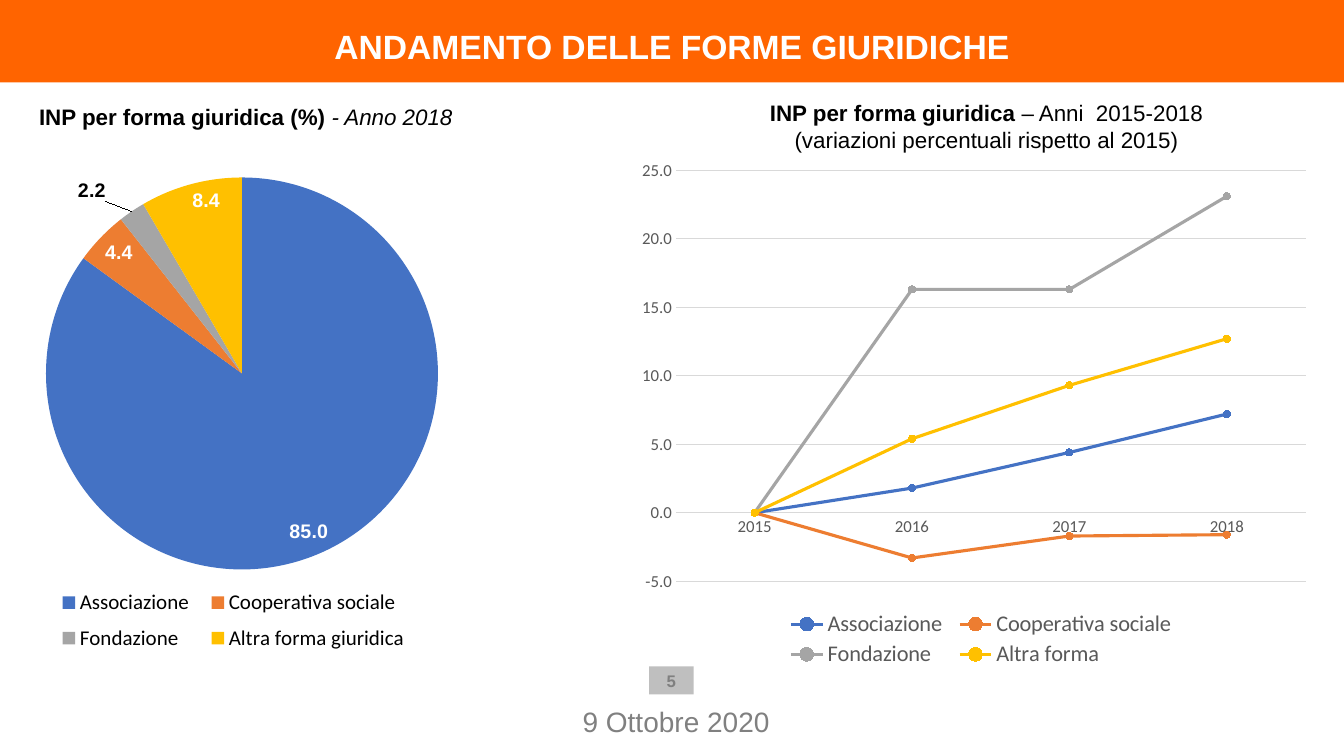
from lxml.etree import SubElement
from pptx import Presentation
from pptx.chart.data import CategoryChartData
from pptx.dml.color import RGBColor
from pptx.enum.chart import XL_CHART_TYPE as CT, XL_LABEL_POSITION as LP
from pptx.enum.chart import XL_LEGEND_POSITION, XL_MARKER_STYLE, XL_TICK_MARK
from pptx.enum.shapes import MSO_SHAPE
from pptx.enum.text import MSO_ANCHOR, PP_ALIGN
from pptx.oxml import parse_xml
from pptx.oxml.ns import nsdecls, qn
from pptx.util import Cm, Pt

COLORS = {
    "orange": "FF6400", "white": "FFFFFF", "black": "000000",
    "badge": "BFBFBF", "muted": "808080", "axis": "595959", "grid": "D9D9D9",
}
SERIES_COLORS = ["4472C4", "ED7D31", "A5A5A5", "FFC000"]
SHARES = {
    "Associazione": 85.0, "Cooperativa sociale": 4.4,
    "Fondazione": 2.2, "Altra forma giuridica": 8.4,
}
YEARS = ["2015", "2016", "2017", "2018"]
CHANGES = {
    "Associazione": [0, 1.8, 4.4, 7.2],
    "Cooperativa sociale": [0, -3.3, -1.7, -1.6],
    "Fondazione": [0, 16.3, 16.3, 23.1],
    "Altra forma": [0, 5.4, 9.3, 12.7],
}


def rgb(name):
    return RGBColor.from_string(COLORS.get(name, name))


def style_font(font, size, color, name="Arial", bold=False, italic=False):
    font.size, font.name, font.bold, font.italic = Pt(size), name, bold, italic
    font.color.rgb = rgb(color)


def paint(fmt, color):
    fmt.fill.solid()
    fmt.fill.fore_color.rgb = rgb(color)


def write(sp, lines, size, color, anchor, insets=(0.25, 0.13, 0.25, 0.13), wrap=True):
    tf = sp.text_frame
    tf.word_wrap, tf.vertical_anchor = wrap, anchor
    tf.margin_left, tf.margin_top, tf.margin_right, tf.margin_bottom = map(Cm, insets)
    for i, runs in enumerate(lines):
        p = tf.add_paragraph() if i else tf.paragraphs[0]
        p.alignment = PP_ALIGN.CENTER
        for text, bold, italic in runs:
            r = p.add_run()
            r.text = text
            style_font(r.font, size, color, bold=bold, italic=italic)


def add_bar(s, box, fill, text, size, color, anchor, insets):
    sp = s.shapes.add_shape(MSO_SHAPE.RECTANGLE, *map(Cm, box))
    sp.shadow.inherit = False
    paint(sp, fill)
    sp.line.fill.background()
    write(sp, [[(text, True, False)]], size, color, anchor, insets)


def add_text(s, box, lines, size, color="black", anchor=MSO_ANCHOR.TOP, **options):
    sp = s.shapes.add_textbox(*map(Cm, box))
    write(sp, lines, size, color, anchor, **options)


def set_layout(parent, index, inner=False, fixed=True, **values):
    for old in parent.findall(qn("c:layout")):
        parent.remove(old)
    layout = parse_xml(f"<c:layout {nsdecls('c')}><c:manualLayout/></c:layout>")
    manual = layout[0]
    if inner:
        SubElement(manual, qn("c:layoutTarget")).set("val", "inner")
    if fixed:
        for mode in ("xMode", "yMode"):
            SubElement(manual, qn(f"c:{mode}")).set("val", "edge")
    for key, value in values.items():
        SubElement(manual, qn(f"c:{key}")).set("val", str(value))
    parent.insert(index, layout)


def add_chart(s, kind, box, cats, series, legend_size, legend_color, plot_box, legend_box):
    data = CategoryChartData(number_format="0.0")
    data.categories = cats
    for name, values in series.items():
        data.add_series(name, values)
    chart = s.shapes.add_chart(kind, *map(Cm, box), data).chart
    chart.has_title = False
    style_font(chart.font, 12, "black", "Calibri")
    chart.has_legend = True
    legend = chart.legend
    legend.position = XL_LEGEND_POSITION.BOTTOM
    legend.include_in_layout = False
    style_font(legend.font, legend_size, legend_color, "Calibri")
    plot_area = chart.plots[0]._element.getparent()
    set_layout(plot_area, 0, inner=True, **plot_box)
    set_layout(legend._element, 1, **legend_box)
    return chart


def add_pie(s):
    chart = add_chart(
        s, CT.PIE, (0.38, 3.96, 11.46, 12.83), list(SHARES),
        {"Series 1": list(SHARES.values())}, 15, "black",
        dict(x=0.068, y=0.04, w=0.862, h=0.77), dict(x=0.07, y=0.83, w=0.82, h=0.16))
    chart.plots[0].vary_by_categories = True
    ser = chart.plots[0].series[0]
    for i, color in enumerate(SERIES_COLORS):
        paint(ser.points[i].format, color)
    labels = ser.data_labels
    labels.show_value = True
    labels.number_format, labels.number_format_is_linked = "0.0", False
    labels.position = LP.INSIDE_END
    style_font(labels.font, 14, "white", bold=True)
    label = ser.points[2].data_label
    style_font(label.font, 14, "black", bold=True)
    label.position = LP.OUTSIDE_END
    set_layout(labels._element[0], 1, fixed=False, x=-0.05, y=-0.01)


def add_lines(s):
    chart = add_chart(
        s, CT.LINE_MARKERS, (15.85, 3.76, 17.4, 13.28), YEARS, CHANGES, 16, "axis",
        dict(x=0.068, y=0.04, w=0.912, h=0.78), dict(x=0.22, y=0.87, w=0.58, h=0.12))
    for ser, color in zip(chart.plots[0].series, SERIES_COLORS):
        ser.smooth = False
        ser.format.line.width = Pt(2.25)
        ser.format.line.color.rgb = rgb(color)
        ser.marker.style, ser.marker.size = XL_MARKER_STYLE.CIRCLE, 5
        paint(ser.marker.format, color)
        ser.marker.format.line.color.rgb = rgb(color)
    years, values = chart.category_axis, chart.value_axis
    for axis in (years, values):
        axis.major_tick_mark = axis.minor_tick_mark = XL_TICK_MARK.NONE
        style_font(axis.tick_labels.font, 12, "axis", "Calibri")
    values.minimum_scale, values.maximum_scale, values.major_unit = -5, 25, 5
    values.tick_labels.number_format = "#,##0.0"
    values.tick_labels.number_format_is_linked = False
    values.format.line.fill.background()
    for line in (years.format.line, values.major_gridlines.format.line):
        line.color.rgb = rgb("grid")
        line.width = Pt(0.75)


def main():
    prs = Presentation()
    prs.slide_width, prs.slide_height = Cm(33.87), Cm(19.05)
    s = prs.slides.add_slide(prs.slide_layouts[6])
    add_bar(s, (16.36, 16.79, 1.12, 0.71), "badge", "5", 12, "muted",
            MSO_ANCHOR.MIDDLE, (0, 0, 0, 0))
    add_bar(s, (0, 0, 33.87, 2.08), "orange", "ANDAMENTO DELLE FORME GIURIDICHE",
            24, "white", MSO_ANCHOR.BOTTOM, (0.79, 0.2, 0.79, 0.41))
    add_text(s, (10.03, 17.7, 14.02, 0.91), [[("9 Ottobre 2020", False, False)]],
             20, "muted", MSO_ANCHOR.BOTTOM, insets=(0.25, 0.13, 0.25, 0))
    add_pie(s)
    add_text(s, (0.66, 2.46, 11.07, 0.94),
             [[("INP per forma giuridica (%) ", True, False), ("- Anno 2018", False, True)]],
             16, wrap=False)
    add_text(s, (15.85, 2.36, 18.02, 1.63),
             [[("INP per forma giuridica ", True, False), ("– Anni  2015-2018", False, False)],
              [("(variazioni percentuali rispetto al 2015)", False, False)]], 16)
    add_lines(s)
    prs.save("out.pptx")


if __name__ == "__main__":
    main()
